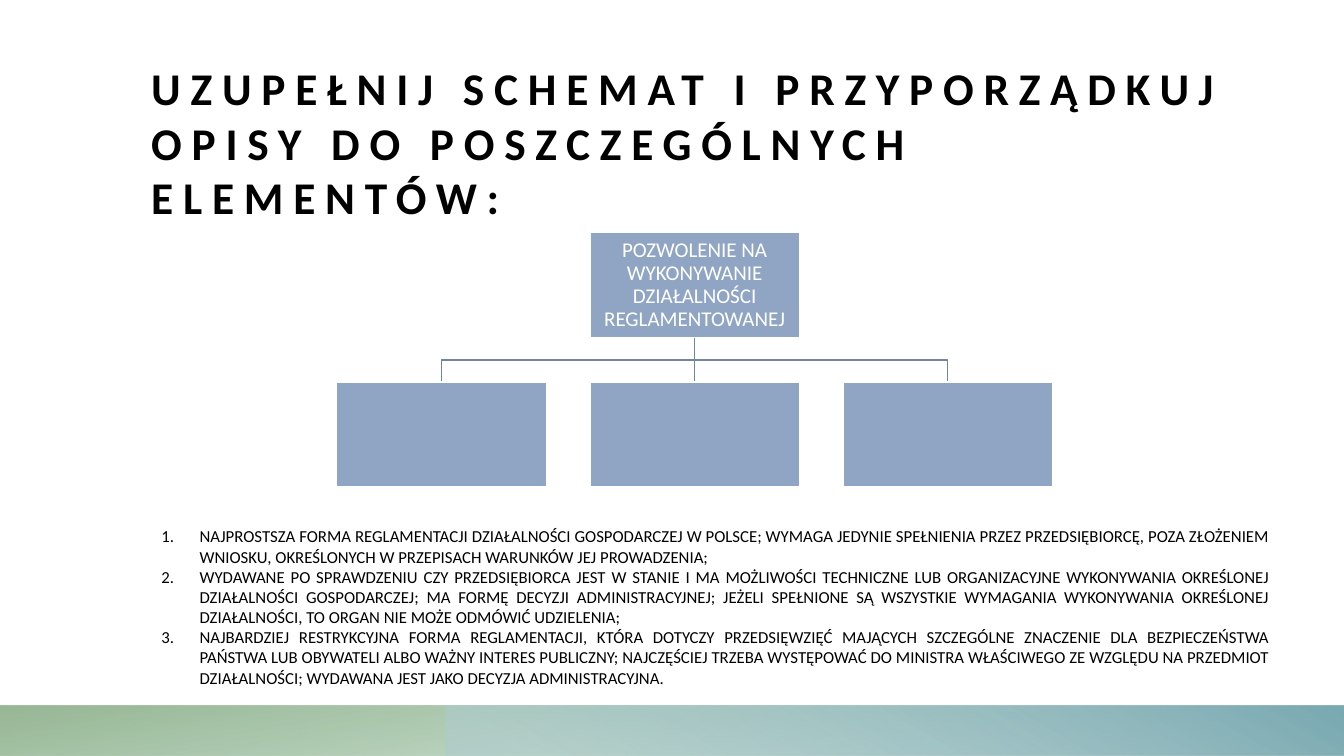
from pptx import Presentation
from pptx.dml.color import RGBColor
from pptx.enum.shapes import MSO_CONNECTOR, MSO_SHAPE
from pptx.enum.text import MSO_ANCHOR, MSO_AUTO_SIZE, PP_ALIGN
from pptx.oxml.ns import qn
from pptx.util import Inches, Pt
from lxml import etree

RECTANGLE = MSO_SHAPE.RECTANGLE
STRAIGHT = MSO_CONNECTOR.STRAIGHT
TOP, MIDDLE, BOTTOM = MSO_ANCHOR.TOP, MSO_ANCHOR.MIDDLE, MSO_ANCHOR.BOTTOM
LEFT, CENTER, JUSTIFY = PP_ALIGN.LEFT, PP_ALIGN.CENTER, PP_ALIGN.JUSTIFY
NO_AUTOFIT = MSO_AUTO_SIZE.NONE

COLORS = {
    "text": "000000",
    "white": "FFFFFF",
    "box": "8FA5C3",
    "branch": "73849C",
    "mint": "77AF89",
    "sage": "86AB82",
    "mist": "AFCCD1",
    "teal": "7AAAB2",
}

TITLE = "UZUPEŁNIJ SCHEMAT I PRZYPORZĄDKUJ OPISY DO POSZCZEGÓLNYCH ELEMENTÓW:"
ROOT = "POZWOLENIE NA WYKONYWANIE DZIAŁALNOŚCI REGLAMENTOWANEJ"
DESCRIPTIONS = [
    "NAJPROSTSZA FORMA REGLAMENTACJI DZIAŁALNOŚCI GOSPODARCZEJ W POLSCE; "
    "WYMAGA JEDYNIE SPEŁNIENIA PRZEZ PRZEDSIĘBIORCĘ, POZA ZŁOŻENIEM WNIOSKU, "
    "OKREŚLONYCH W PRZEPISACH WARUNKÓW JEJ PROWADZENIA;",
    "WYDAWANE PO SPRAWDZENIU CZY PRZEDSIĘBIORCA JEST W STANIE I MA MOŻLIWOŚCI "
    "TECHNICZNE LUB ORGANIZACYJNE WYKONYWANIA OKREŚLONEJ DZIAŁALNOŚCI "
    "GOSPODARCZEJ; MA FORMĘ DECYZJI ADMINISTRACYJNEJ; JEŻELI SPEŁNIONE SĄ "
    "WSZYSTKIE WYMAGANIA WYKONYWANIA OKREŚLONEJ DZIAŁALNOŚCI, TO ORGAN NIE "
    "MOŻE ODMÓWIĆ UDZIELENIA;",
    "NAJBARDZIEJ RESTRYKCYJNA FORMA REGLAMENTACJI, KTÓRA DOTYCZY PRZEDSIĘWZIĘĆ "
    "MAJĄCYCH SZCZEGÓLNE ZNACZENIE DLA BEZPIECZEŃSTWA PAŃSTWA LUB OBYWATELI "
    "ALBO WAŻNY INTERES PUBLICZNY; NAJCZĘŚCIEJ TRZEBA WYSTĘPOWAĆ DO MINISTRA "
    "WŁAŚCIWEGO ZE WZGLĘDU NA PRZEDMIOT DZIAŁALNOŚCI; WYDAWANA JEST JAKO "
    "DECYZJA ADMINISTRACYJNA.",
]

BOX_WIDTH, BOX_HEIGHT = 2.08, 1.04
ROOT_CENTER, ROOT_TOP = 6.89, 2.31
CHILD_TOP, CHILD_STEP = 3.79, 2.51


def color(name):
    return RGBColor.from_string(COLORS[name])


def assign(target, values):
    for name, value in values.items():
        setattr(target, name, value)


class SlideBuilder:
    font = "Calibri"

    def __init__(self, slide):
        self.slide = slide
        self.shapes = slide.shapes

    def place(self, shape, left, top, width, height):
        assign(shape, {"left": Inches(left), "top": Inches(top),
                       "width": Inches(width), "height": Inches(height)})

    def fill_text(self, shape, texts, size, ink, frame, paragraph, bold=False, spacing=0):
        text_frame = shape.text_frame
        assign(text_frame, {"word_wrap": True, "auto_size": NO_AUTOFIT, **frame})
        for index, text in enumerate(texts):
            para = text_frame.add_paragraph() if index else text_frame.paragraphs[0]
            assign(para, {"space_before": Pt(0), **paragraph})
            span = para.add_run()
            span.text = text
            assign(span.font, {"name": self.font, "size": Pt(size), "bold": bold})
            span.font.color.rgb = color(ink)
            if spacing:
                span._r.get_or_add_rPr().set("spc", str(spacing * 100))

    def rectangle(self, left, top, width, height):
        box = self.shapes.add_shape(RECTANGLE, Inches(left), Inches(top),
                                    Inches(width), Inches(height))
        box.shadow.inherit = False
        return box

    def band(self, left, width, angle, stops, rotation=0):
        band = self.rectangle(left, 7, width, 0.5)
        band.rotation = rotation
        band._element.spPr.find(qn("a:xfrm")).set("flipH", "1")
        band.line.fill.background()
        band.fill.gradient()
        band.fill.gradient_angle = 360 - angle
        for stop, (position, name, _) in zip(band.fill.gradient_stops, stops):
            stop.position = position
            stop.color.rgb = color(name)
        tones = band._element.spPr.iter(qn("a:srgbClr"))
        for tone, (_, _, opacity) in zip(list(tones), stops):
            etree.SubElement(tone, qn("a:alpha")).set("val", str(opacity * 1000))

    def node(self, center, top, text=""):
        box = self.rectangle(center - BOX_WIDTH / 2, top, BOX_WIDTH, BOX_HEIGHT)
        box.fill.solid()
        box.fill.fore_color.rgb = color("box")
        self.outline(box, "white")
        if text:
            margins = ("margin_left", "margin_top", "margin_right", "margin_bottom")
            frame = dict.fromkeys(margins, Inches(0.01))
            self.fill_text(box, [text], 15, "white", {**frame, "vertical_anchor": MIDDLE},
                           {"alignment": CENTER, "line_spacing": 0.9})

    def outline(self, shape, name):
        shape.line.color.rgb = color(name)
        shape.line.width = Pt(1)

    def stem(self, center, top, bottom):
        stem = self.shapes.add_connector(STRAIGHT, Inches(center), Inches(top),
                                         Inches(center), Inches(bottom))
        self.outline(stem, "branch")
        etree.SubElement(stem._element.spPr, qn("a:effectLst"))

    def branch(self, start, end, top, bottom):
        middle = (top + bottom) / 2
        corners = [(start, middle), (end, middle), (end, bottom)]
        builder = self.shapes.build_freeform(Inches(start), Inches(top))
        builder.add_line_segments([(Inches(x), Inches(y)) for x, y in corners], close=False)
        branch = builder.convert_to_shape()
        branch.shadow.inherit = False
        branch.fill.background()
        self.outline(branch, "branch")

    def title(self, text):
        title = self.shapes.title
        self.place(title, 1.5, 0.87, 11.2, 1.35)
        frame = {"margin_left": 0, "margin_top": 0, "margin_right": 0,
                 "margin_bottom": 0, "vertical_anchor": BOTTOM}
        self.fill_text(title, [text], 32.4, "text", frame, {"alignment": LEFT},
                       bold=True, spacing=7)

    def numbered_list(self, texts):
        body = self.slide.placeholders[1]
        self.place(body, 1.5, 5.17, 11.2, 1.8)
        self.fill_text(body, texts, 12, "text", {"vertical_anchor": TOP},
                       {"alignment": JUSTIFY})
        for para in body.text_frame.paragraphs:
            properties = para._p.get_or_add_pPr()
            properties.set("marL", str(Inches(0.38)))
            properties.set("indent", str(Inches(-0.38)))
            font = etree.SubElement(properties, qn("a:buFont"))
            font.set("typeface", "+mj-lt")
            number = etree.SubElement(properties, qn("a:buAutoNum"))
            number.set("type", "arabicPeriod")


def main():
    deck = Presentation()
    deck.slide_width, deck.slide_height = Inches(13.33), Inches(7.5)
    page = SlideBuilder(deck.slides.add_slide(deck.slide_layouts[1]))
    page.band(0, 13.33, 100, [(0.14, "mint", 28), (1, "sage", 85)], rotation=180)
    page.band(4.42, 8.91, 240, [(0.09, "mist", 55), (0.99, "teal", 100)])
    page.title(TITLE)
    centers = [ROOT_CENTER + step * CHILD_STEP for step in (-1, 0, 1)]
    root_bottom = ROOT_TOP + BOX_HEIGHT
    for center in (centers[0], centers[-1]):
        page.branch(ROOT_CENTER, center, root_bottom, CHILD_TOP)
    page.stem(ROOT_CENTER, root_bottom, CHILD_TOP)
    page.node(ROOT_CENTER, ROOT_TOP, ROOT)
    for center in centers:
        page.node(center, CHILD_TOP)
    page.numbered_list(DESCRIPTIONS)
    deck.save("out.pptx")


if __name__ == "__main__":
    main()
